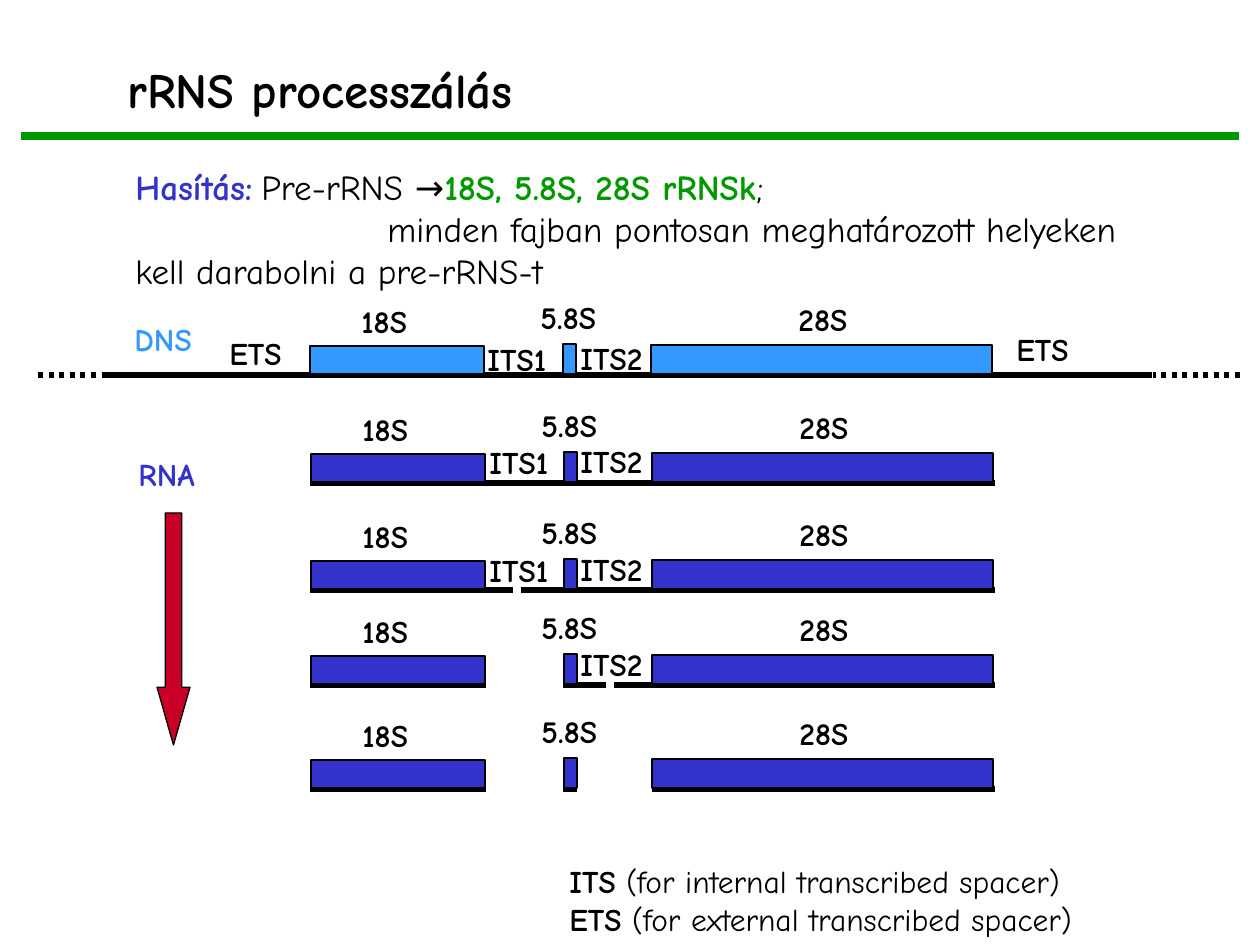
from lxml.etree import SubElement
from pptx import Presentation
from pptx.dml.color import RGBColor
from pptx.enum.dml import MSO_LINE_DASH_STYLE as Dash
from pptx.enum.shapes import MSO_CONNECTOR, MSO_SHAPE as Shape
from pptx.oxml.ns import qn
from pptx.util import Emu, Pt

PX = 914400 // 126
FONT = "Comic Neue"
BLACK, GREEN, SKY, BLUE, RED = "000000", "009900", "3399FF", "3333CC", "C80028"

# Paragraphs are lists of (text, colour, bold)
TITLE = [[("rRNS processzálás", BLACK, True)]]
INTRO = [
    [("Hasítás:", BLUE, True), ("\tPre-rRNS →", BLACK, False),
     ("18S, 5.8S, 28S rRNSk", GREEN, True), (";", BLACK, False)],
    [("minden fajban pontosan meghatározott helyeken", BLACK, False)],
    [("kell darabolni a pre-rRNS-t", BLACK, False)],
]
LEGEND = [
    [("ITS", BLACK, True), (" (for internal transcribed spacer)", BLACK, False)],
    [("ETS", BLACK, True), (" (for external transcribed spacer)", BLACK, False)],
]

# Gene: left, width, height, label left, label width, label rise above the strand
GENES = {
    "18S": (310, 174, 28, 349, 82, 79),
    "28S": (651, 341, 29, 786, 82, 81),
    "5.8S": (563, 13, 30, 528, 91, 83),
}
# Strand: y, colour, shift of the genes, solid segments
STRANDS = [
    (375, SKY, 0, [(102, 1152)]),
    (483, BLUE, 1, [(310, 995)]),
    (590, BLUE, 1, [(310, 513), (521, 995)]),
    (685, BLUE, 1, [(310, 486), (563, 606), (614, 995)]),
    (789, BLUE, 1, [(310, 486), (563, 577), (652, 995)]),
]
DOTTED_ENDS = [(96, 38), (1240, 1153)]
# Label: text, left, top, width, colour
LABELS = [
    ("ETS", 217, 328, 87, BLACK), ("ETS", 1004, 324, 87, BLACK),
    ("ITS1", 475, 334, 92, BLACK), ("ITS2", 568, 333, 92, BLACK),
    ("ITS1", 477, 437, 92, BLACK), ("ITS2", 568, 436, 92, BLACK),
    ("ITS1", 477, 545, 92, BLACK), ("ITS2", 568, 544, 92, BLACK),
    ("ITS2", 568, 639, 92, BLACK),
    ("DNS", 122, 314, 96, SKY), ("RNA", 126, 449, 93, BLUE),
]


def px(*lengths):
    return [Emu(length * PX) for length in lengths]


def colour(hex_string):
    return RGBColor.from_string(hex_string)


def add_text(slide, paragraphs, left, top, width, height, size, wrap=False):
    box = slide.shapes.add_textbox(*px(left, top, width, height))
    frame = box.text_frame
    frame.word_wrap = wrap
    for index, spans in enumerate(paragraphs):
        para = frame.paragraphs[0] if index == 0 else frame.add_paragraph()
        for text, hex_string, bold in spans:
            span = para.add_run()
            span.text = text
            span.font.name = FONT
            span.font.size = Pt(size)
            span.font.bold = bold
            span.font.color.rgb = colour(hex_string)
    return box


def add_label(slide, text, left, top, width, hex_string=BLACK):
    add_text(slide, [[(text, hex_string, True)]], left, top, width, 50, 18)


def add_line(slide, start, end, y, hex_string=BLACK, weight=3, dash=None):
    line = slide.shapes.add_connector(MSO_CONNECTOR.STRAIGHT, *px(start, y, end, y))
    line.line.color.rgb = colour(hex_string)
    line.line.width = Pt(weight)
    if dash:
        line.line.dash_style = dash
    SubElement(line._element.spPr, qn("a:effectLst"))


def add_filled(slide, kind, left, top, width, height, fill):
    shape = slide.shapes.add_shape(kind, *px(left, top, width, height))
    shape.shadow.inherit = False
    shape.fill.solid()
    shape.fill.fore_color.rgb = colour(fill)
    shape.line.color.rgb = colour(BLACK)
    shape.line.width = Pt(0.75)
    return shape


def add_strand(slide, y, fill, shift, segments):
    for start, end in segments:
        add_line(slide, start, end, y)
    for name, (left, width, height, label_left, label_width, rise) in GENES.items():
        add_filled(slide, Shape.RECTANGLE, left + shift, y - height - 1, width, height, fill)
        add_label(slide, name, label_left + shift, y - rise, label_width)


def main():
    deck = Presentation()
    deck.slide_width, deck.slide_height = px(1260, 945)
    slide = deck.slides.add_slide(deck.slide_layouts[6])

    add_text(slide, TITLE, 115, 53, 474, 72, 28)
    add_line(slide, 21, 1239, 136, GREEN, 4.5)
    intro = add_text(slide, INTRO, 123, 159, 1089, 140, 20, wrap=True)
    indented = intro.text_frame.paragraphs[1]._p.get_or_add_pPr()
    indented.set("indent", str(252 * PX))

    for strand in STRANDS:
        add_strand(slide, *strand)
    for start, end in DOTTED_ENDS:
        add_line(slide, start, end, STRANDS[0][0], dash=Dash.ROUND_DOT)
    for label in LABELS:
        add_label(slide, *label)

    arrow = add_filled(slide, Shape.DOWN_ARROW, 157, 513, 33, 232, RED)
    arrow.adjustments[0] = 0.5
    arrow.adjustments[1] = 1.75
    add_text(slide, LEGEND, 557, 856, 596, 89, 18, wrap=True)

    deck.save("out.pptx")


if __name__ == "__main__":
    main()
